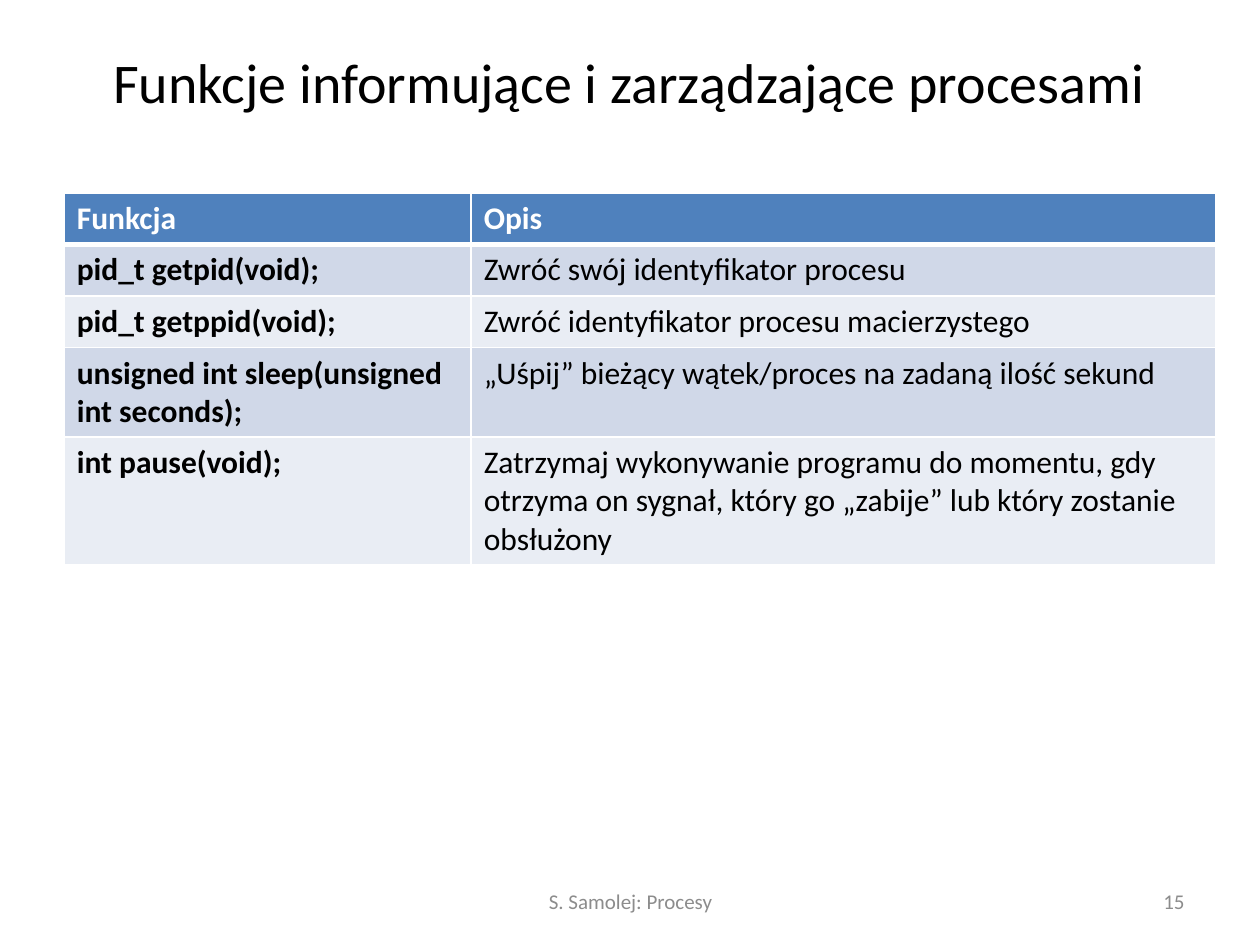
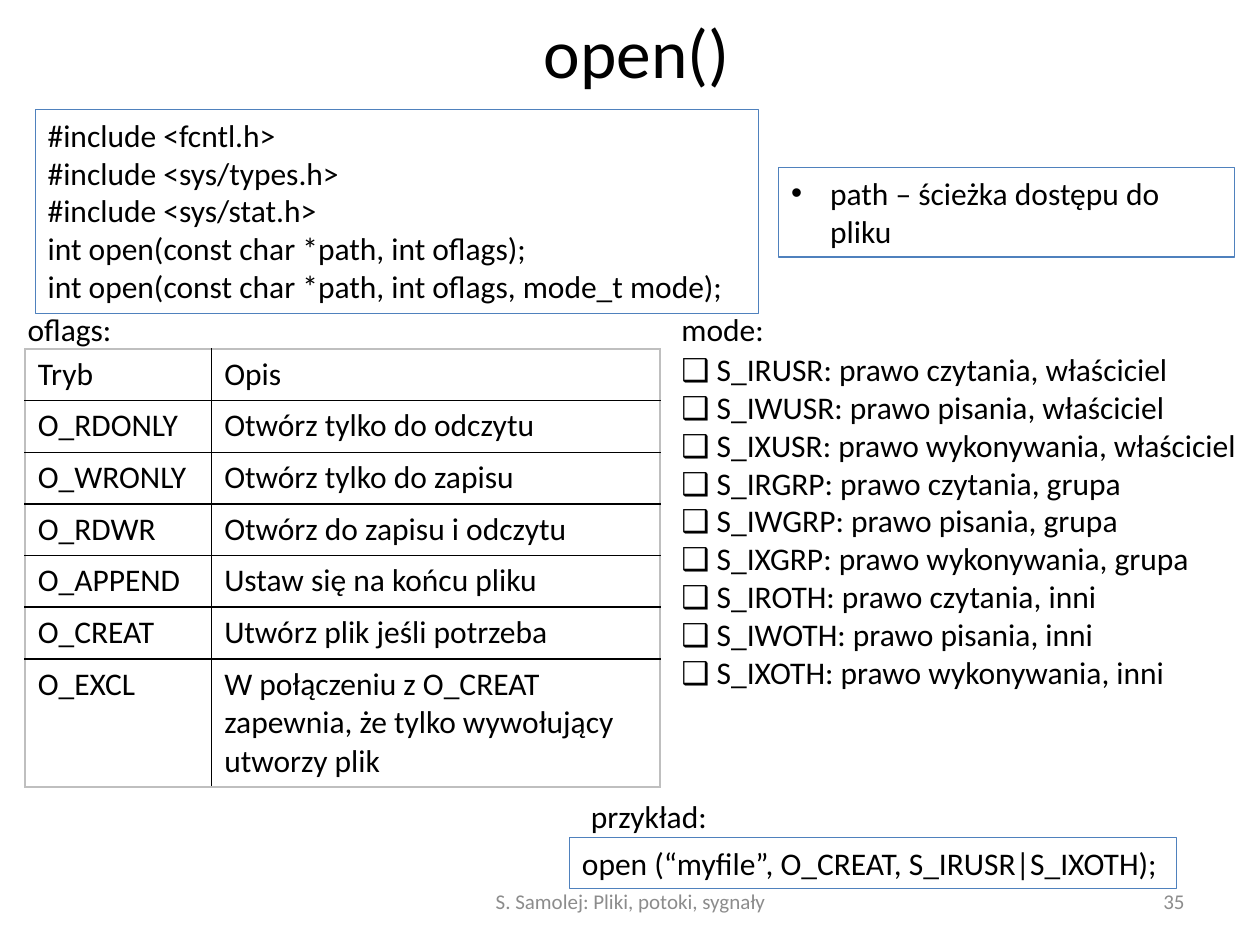
from typing import NamedTuple

from lxml.etree import SubElement
from pptx import Presentation
from pptx.dml.color import RGBColor
from pptx.enum.shapes import MSO_SHAPE
from pptx.enum.text import MSO_ANCHOR, MSO_AUTO_SIZE, PP_ALIGN
from pptx.oxml.ns import qn
from pptx.util import Emu, Pt

PX = 9144  # 100 px to the inch
FONT = "Calibri"
BODY = 18
COLORS = {
    "text": "000000", "white": "FFFFFF", "foot": "8C8C8C", "blue": "4F81BD",
    "odd": "D0D8E8", "even": "E9EDF4", "edge": "BFBFBF",
}


class Area(NamedTuple):
    x: int
    y: int
    w: int
    h: int


class Label(NamedTuple):
    area: Area
    text: str
    size: float = BODY
    color: str = "text"
    align: PP_ALIGN = PP_ALIGN.LEFT
    middle: bool = False
    framed: bool = False
    bullet: bool = False
    wrap: bool = True


class Grid(NamedTuple):
    x: int
    y: int
    cols: list[int]
    heights: list[int]
    rows: list[tuple[str, str]]
    banded: bool


# Shared helpers
def px(value: int) -> Emu:
    return Emu(value * PX)


def rgb(name: str) -> RGBColor:
    return RGBColor.from_string(COLORS[name])


def style(para, size: float, color: str, bold: bool = False) -> None:
    for run in para.runs:
        font = run.font
        font.name, font.size, font.bold = FONT, Pt(size), bold
        font.color.rgb = rgb(color)


def add_dot(para) -> None:
    props = para._p.get_or_add_pPr()
    props.set("marL", str(px(31)))
    props.set("indent", str(px(-31)))
    SubElement(props, qn("a:buFont"), typeface="Arial")
    SubElement(props, qn("a:buChar"), char="•")


def add_label(slide, label: Label) -> None:
    place = [px(side) for side in label.area]
    if label.framed:
        shape = slide.shapes.add_shape(MSO_SHAPE.RECTANGLE, *place)
        shape.shadow.inherit = False
        shape.fill.background()
        shape.line.color.rgb = rgb("blue")
        shape.line.width = Pt(0.75)
    else:
        shape = slide.shapes.add_textbox(*place)
    frame = shape.text_frame
    frame.text = label.text
    frame.word_wrap = label.wrap
    frame.auto_size = MSO_AUTO_SIZE.NONE
    frame.vertical_anchor = MSO_ANCHOR.MIDDLE if label.middle else MSO_ANCHOR.TOP
    for para in frame.paragraphs:
        para.alignment = label.align
        style(para, label.size, label.color)
        if label.bullet:
            add_dot(para)


def add_border(cell, side: str, color: str, width: float) -> None:
    line = SubElement(cell._tc.get_or_add_tcPr(), qn(f"a:ln{side}"), w=str(Pt(width)))
    fill = SubElement(line, qn("a:solidFill"))
    SubElement(fill, qn("a:srgbClr"), val=COLORS[color])


def add_grid(slide, grid: Grid) -> None:
    count, wide = len(grid.rows), len(grid.cols)
    table = slide.shapes.add_table(
        count, wide, px(grid.x), px(grid.y),
        px(sum(grid.cols)), px(sum(grid.heights))).table
    table.first_row = table.horz_banding = False
    for col, width in zip(table.columns, grid.cols):
        col.width = px(width)
    for r, (row, height) in enumerate(zip(table.rows, grid.heights)):
        row.height = px(height)
        for c, cell in enumerate(row.cells):
            cell.text = grid.rows[r][c]
            head = grid.banded and r == 0
            bold = grid.banded and (head or c == 0)
            style(cell.text_frame.paragraphs[0], BODY, "white" if head else "text", bold)
            # Borders come before the fill
            outer = {"L": c == 0, "R": c == wide - 1, "T": r == 0, "B": r == count - 1}
            for side, edge in outer.items():
                if grid.banded:
                    thick = (r, side) in ((0, "B"), (1, "T"))
                    add_border(cell, side, "white", 3 if thick else 1)
                else:
                    add_border(cell, side, "edge" if edge else "text", 1)
            if grid.banded:
                cell.fill.solid()
                cell.fill.fore_color.rgb = rgb("blue" if head else "odd" if r % 2 else "even")
            else:
                cell.fill.background()


def add_page(deck, title: Label, foot: str, number: int):
    slide = deck.slides.add_slide(deck.slide_layouts[6])
    add_label(slide, title)
    add_label(slide, Label(Area(342, 695, 317, 40), foot, 12, "foot", PP_ALIGN.CENTER, True))
    add_label(slide, Label(Area(717, 695, 233, 40), str(number), 12, "foot",
                           PP_ALIGN.RIGHT, True))
    return slide


def make_title(area: Area, text: str, size: float) -> Label:
    return Label(area, text, size, align=PP_ALIGN.CENTER, middle=True)


# Slide content
CALLS = Grid(51, 153, [323, 591], [41, 41, 41, 70, 101], [
    ("Funkcja", "Opis"),
    ("pid_t getpid(void);", "Zwróć swój identyfikator procesu"),
    ("pid_t getppid(void);", "Zwróć identyfikator procesu macierzystego"),
    ("unsigned int sleep(unsigned int seconds);",
     "„Uśpij” bieżący wątek/proces na zadaną ilość sekund"),
    ("int pause(void);",
     "Zatrzymaj wykonywanie programu do momentu, gdy otrzyma on sygnał, "
     "który go „zabije” lub który zostanie obsłużony"),
], True)

FLAGS = Grid(20, 277, [148, 356], [41] * 6 + [100], [
    ("Tryb", "Opis"),
    ("O_RDONLY", "Otwórz tylko do odczytu"),
    ("O_WRONLY", "Otwórz tylko do zapisu"),
    ("O_RDWR", "Otwórz do zapisu i odczytu"),
    ("O_APPEND", "Ustaw się na końcu pliku"),
    ("O_CREAT", "Utwórz plik jeśli potrzeba"),
    ("O_EXCL", "W połączeniu z O_CREAT zapewnia, że tylko wywołujący utworzy plik"),
], False)

CODE = """#include <fcntl.h>
#include <sys/types.h>
#include <sys/stat.h>
int open(const char *path, int oflags);
int open(const char *path, int oflags, mode_t mode);"""

RIGHTS = {"R": "czytania", "W": "pisania", "X": "wykonywania"}
OWNERS = {"USR": "właściciel", "GRP": "grupa", "OTH": "inni"}
MODES = "\n".join(
    f"❑ S_I{key}{who}: prawo {right}, {owner}"
    for who, owner in OWNERS.items() for key, right in RIGHTS.items())

NOTES = [
    Label(Area(28, 87, 574, 162), CODE, framed=True),
    Label(Area(12, 241, 88, 40), "oflags:", wrap=False),
    Label(Area(531, 241, 87, 40), "mode:"),
    Label(Area(531, 273, 469, 283), MODES),
    Label(Area(452, 665, 482, 40), "open (“myfile”, O_CREAT, S_IRUSR|S_IXOTH);",
          framed=True, wrap=False),
    Label(Area(459, 628, 142, 40), "przykład:"),
    Label(Area(618, 133, 362, 71), "path – ścieżka dostępu do pliku",
          framed=True, bullet=True),
]


def main() -> None:
    deck = Presentation()
    deck.slide_width, deck.slide_height = px(1000), px(750)

    # Process functions
    title = make_title(Area(50, 30, 899, 69),
                       "Funkcje informujące i zarządzające procesami", 32)
    add_grid(add_page(deck, title, "S. Samolej: Procesy", 15), CALLS)

    # Opening files
    title = make_title(Area(52, 13, 907, 54), "open()", 39.6)
    slide = add_page(deck, title, "S. Samolej: Pliki, potoki, sygnały", 35)
    add_grid(slide, FLAGS)
    for note in NOTES:
        add_label(slide, note)

    deck.save("out.pptx")


if __name__ == "__main__":
    main()
